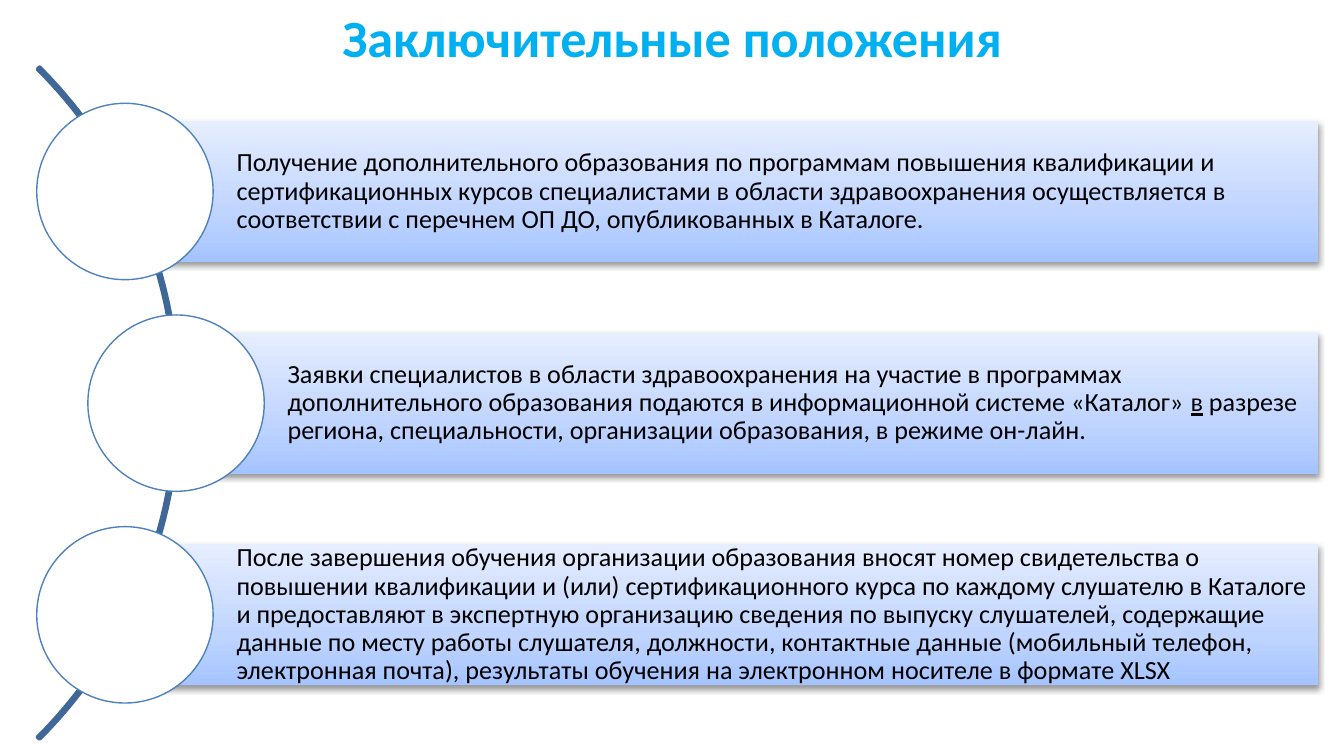
from dataclasses import dataclass

from pptx import Presentation
from pptx.dml.color import RGBColor
from pptx.enum.shapes import MSO_SHAPE
from pptx.enum.text import MSO_ANCHOR, PP_ALIGN
from pptx.oxml import parse_xml
from pptx.oxml.ns import nsdecls, qn
from pptx.util import Inches, Pt

RECT, OVAL, ARC = MSO_SHAPE.RECTANGLE, MSO_SHAPE.OVAL, MSO_SHAPE.BLOCK_ARC
MIDDLE = MSO_ANCHOR.MIDDLE
CENTER, LEFT = PP_ALIGN.CENTER, PP_ALIGN.LEFT


@dataclass(frozen=True)
class Theme:
    """Colours and type sizes of the slide."""
    font: str = "Calibri"
    title: str = "00B0F0"
    text: str = "000000"
    arc: str = "3F6797"
    ring: str = "4F81BD"
    disc: str = "FFFFFF"
    bar_stops: tuple = ((0, "A4C4FF"), (35, "BFD4FF"), (100, "E6EEFF"))
    title_size: int = 28
    body_size: int = 14


THEME = Theme()
WIDTH = 10
HEIGHT = WIDTH * 9 / 16
ROW = 0.28 * HEIGHT
MIDDLE_ROW = 3
BAR_HEIGHT = ROW * 2 / 3
DISC_SIZE = ROW * 5 / 6
BAR_RIGHT = 9.81
ARC_SIZE = 7.07
ARC_LEFT = -5.74

TITLE = "Заключительные положения"
ITEMS = [
    (0.93, [
        "Получение дополнительного образования по программам повышения "
        "квалификации и сертификационных курсов специалистами в области "
        "здравоохранения осуществляется в соответствии с перечнем ОП ДО, "
        "опубликованных в Каталоге."]),
    (1.31, [
        "Заявки специалистов в области здравоохранения на участие в программах "
        "дополнительного образования подаются в информационной системе «Каталог» ",
        "в",
        " разрезе региона, специальности, организации образования, "
        "в режиме он-лайн."]),
    (0.93, [
        "После завершения обучения организации образования вносят номер "
        "свидетельства о повышении квалификации и (или) сертификационного курса "
        "по каждому слушателю в Каталоге и предоставляют в экспертную организацию "
        "сведения по выпуску слушателей, содержащие данные по месту работы "
        "слушателя, должности, контактные данные (мобильный телефон, электронная "
        "почта), результаты обучения на электронном носителе в формате XLSX"]),
]


def rgb(value):
    """Turn a hex string into a colour."""
    return RGBColor.from_string(value)


def style_run(r, size, color, bold=False):
    """Set the font of a run."""
    r.font.name, r.font.size, r.font.bold = THEME.font, Pt(size), bold
    r.font.color.rgb = rgb(color)


def add_title(s):
    """Add the centred heading."""
    sp = s.shapes.add_textbox(0, Inches(0.01), Inches(WIDTH), Inches(0.52))
    tf = sp.text_frame
    tf.word_wrap, tf.vertical_anchor = True, MIDDLE
    tf.text = TITLE
    p = tf.paragraphs[0]
    p.alignment = CENTER
    style_run(p.runs[0], THEME.title_size, THEME.title, True)


def add_outlined(s, kind, box, fill, line, weight):
    """Add a filled and outlined preset shape without shadow."""
    sp = s.shapes.add_shape(kind, *map(Inches, box))
    sp.shadow.inherit = False
    sp.fill.solid()
    sp.fill.fore_color.rgb = rgb(fill)
    sp.line.color.rgb = rgb(line)
    sp.line.width = Pt(weight)
    return sp


def add_arc(s):
    """Add the thin arc that runs behind the discs."""
    box = (ARC_LEFT, MIDDLE_ROW - ARC_SIZE / 2, ARC_SIZE, ARC_SIZE)
    sp = add_outlined(s, ARC, box, THEME.arc, THEME.arc, 2)
    for i, value in enumerate((189, 27, 0.003)):
        sp.adjustments[i] = value


def paint_bar(sp):
    """Give a bar its upward gradient and its soft shadow."""
    stops = "".join(f'<a:gs pos="{pos * 1000}"><a:srgbClr val="{color}"/></a:gs>'
                    for pos, color in THEME.bar_stops)
    sp._element.spPr.append(parse_xml(
        f'<a:gradFill {nsdecls("a")} rotWithShape="1"><a:gsLst>{stops}</a:gsLst>'
        '<a:lin ang="16200000" scaled="0"/></a:gradFill>'))
    sp.line.fill.background()
    sp.shadow.inherit = False
    sp._element.spPr.find(qn("a:effectLst")).append(parse_xml(
        f'<a:outerShdw {nsdecls("a")} blurRad="{Pt(3.1)}" dist="{Pt(1.6)}" '
        'dir="5400000" rotWithShape="0"><a:srgbClr val="000000">'
        '<a:alpha val="38000"/></a:srgbClr></a:outerShdw>'))


def add_bar(s, left, center, parts):
    """Add a bar with its text; every second part is underlined."""
    box = (left, center - BAR_HEIGHT / 2, BAR_RIGHT - left, BAR_HEIGHT)
    sp = s.shapes.add_shape(RECT, *map(Inches, box))
    paint_bar(sp)
    tf = sp.text_frame
    tf.word_wrap, tf.vertical_anchor = True, MIDDLE
    tf.margin_left = Inches(0.83)
    tf.margin_top = tf.margin_right = tf.margin_bottom = Inches(0.04)
    p = tf.paragraphs[0]
    p.alignment, p.line_spacing = LEFT, 0.9
    for i, part in enumerate(parts):
        r = p.add_run()
        r.text = part
        style_run(r, THEME.body_size, THEME.text)
        r.font.underline = i % 2 == 1


def add_disc(s, x, y):
    """Add a disc centred on a point."""
    box = (x - DISC_SIZE / 2, y - DISC_SIZE / 2, DISC_SIZE, DISC_SIZE)
    add_outlined(s, OVAL, box, THEME.disc, THEME.ring, 0.75)


def main():
    """Build and save the slide."""
    prs = Presentation()
    prs.slide_width, prs.slide_height = Inches(WIDTH), Inches(HEIGHT)
    s = prs.slides.add_slide(prs.slide_layouts[6])
    add_title(s)
    add_arc(s)
    for i, (left, parts) in enumerate(ITEMS):
        center = MIDDLE_ROW + (i - 1) * ROW
        add_bar(s, left, center, parts)
        add_disc(s, left, center)
    prs.save("out.pptx")


if __name__ == "__main__":
    main()
